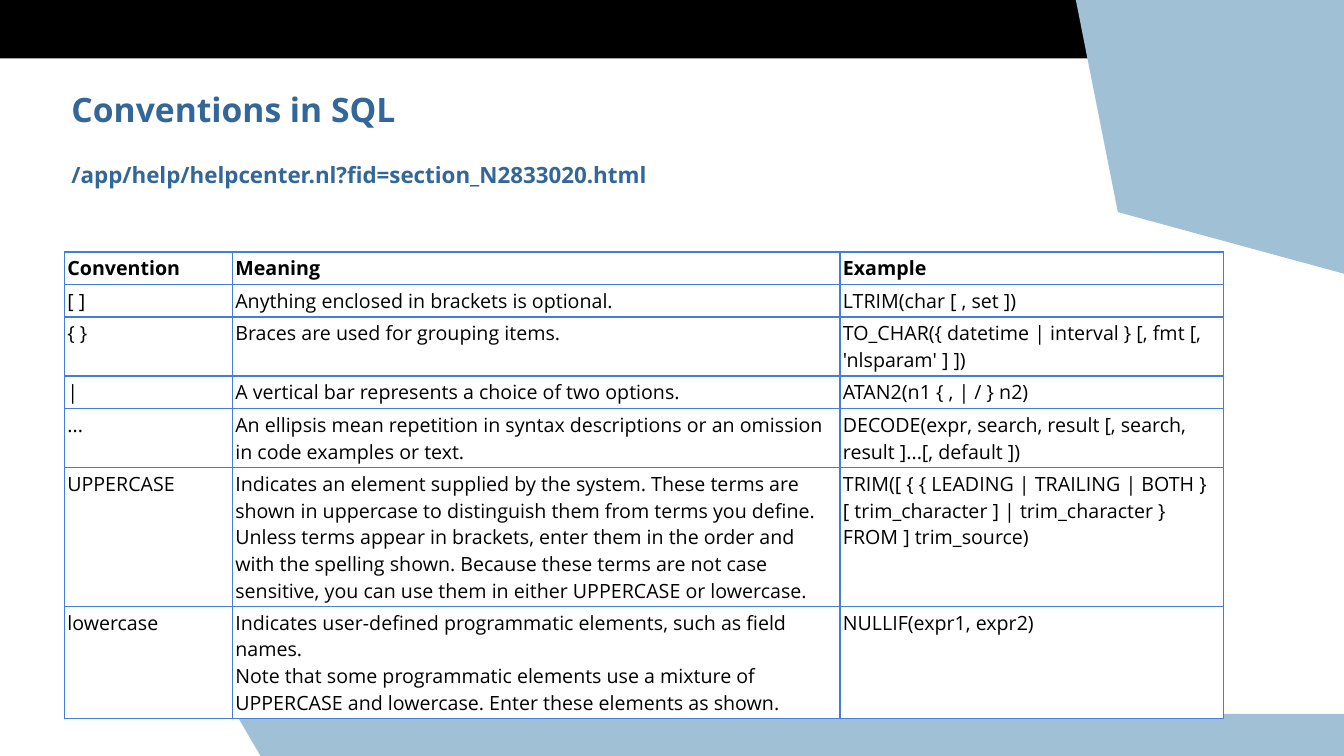
from dataclasses import dataclass

from lxml.etree import SubElement
from pptx import Presentation
from pptx.dml.color import RGBColor
from pptx.enum.shapes import MSO_SHAPE
from pptx.oxml.ns import qn
from pptx.util import Pt


@dataclass(frozen=True)
class Theme:
    white: str = "FFFFFF"
    black: str = "000000"
    pale_blue: str = "A0C1D5"
    heading: str = "336699"
    border: str = "417FD9"
    heading_font: str = "Noto Sans"
    table_font: str = "Open Sans"
    title_size: int = 24
    address_size: int = 16
    table_size: int = 14
    line_height: int = 19
    cell_inset: float = 2.1


THEME = Theme()
SLIDE_WIDTH, SLIDE_HEIGHT = 960, 540
COLUMN_WIDTHS = [120, 434, 274]

# Each row: number of text lines in its tallest cell, then the cell texts
CONVENTIONS = [
    (1, "Convention", "Meaning", "Example"),
    (1, "[ ]", "Anything enclosed in brackets is optional.", "LTRIM(char [ , set ])"),
    (2, "{ }", "Braces are used for grouping items.",
     "TO_CHAR({ datetime | interval } [, fmt [, 'nlsparam' ] ])"),
    (1, "|", "A vertical bar represents a choice of two options.", "ATAN2(n1 { , | / } n2)"),
    (2, "...",
     "An ellipsis mean repetition in syntax descriptions or an omission "
     "in code examples or text.",
     "DECODE(expr, search, result [, search, result ]...[, default ])"),
    (5, "UPPERCASE",
     "Indicates an element supplied by the system. These terms are shown in uppercase "
     "to distinguish them from terms you define. Unless terms appear in brackets, enter "
     "them in the order and with the spelling shown. Because these terms are not case "
     "sensitive, you can use them in either UPPERCASE or lowercase.",
     "TRIM([ { { LEADING | TRAILING | BOTH }[ trim_character ] | trim_character } "
     "FROM ] trim_source)"),
    (4, "lowercase",
     "Indicates user-defined programmatic elements, such as field names.\n"
     "Note that some programmatic elements use a mixture of UPPERCASE and lowercase. "
     "Enter these elements as shown.",
     "NULLIF(expr1, expr2)"),
]


def paint(shape, color):
    shape.shadow.inherit = False
    shape.fill.solid()
    shape.fill.fore_color.rgb = RGBColor.from_string(color)
    shape.line.fill.background()


def add_block(slide, kind, left, top, width, height, color):
    block = slide.shapes.add_shape(kind, Pt(left), Pt(top), Pt(width), Pt(height))
    paint(block, color)


def style_text(paragraph, font_name, size, color, bold):
    for run in paragraph.runs:
        run.font.name = font_name
        run.font.size = Pt(size)
        run.font.bold = bold
        run.font.color.rgb = RGBColor.from_string(color)


def add_top_decoration(slide, left, top, width, height):
    """Black band on the left, slanted pale panel in the right corner."""
    right = left + width
    add_block(slide, MSO_SHAPE.RECTANGLE, left, top, width - 162, 41.8, THEME.black)
    builder = slide.shapes.build_freeform(Pt(right - 191.5), Pt(top))
    builder.add_line_segments([
        (Pt(right - 161.5), Pt(top + 151.5)),
        (Pt(right), Pt(top + height)),
        (Pt(right), Pt(top)),
    ])
    paint(builder.convert_to_shape(), THEME.pale_blue)


def add_bottom_decoration(slide, left, top, width, height):
    """Pale band whose left end is cut at a slant by a white triangle."""
    add_block(slide, MSO_SHAPE.RECTANGLE, left, top, width, height, THEME.pale_blue)
    add_block(slide, MSO_SHAPE.ISOSCELES_TRIANGLE, left - 24, top - 11, 48, height + 11,
              THEME.white)


def add_heading(slide, left, top, width, height):
    frame = slide.shapes.add_textbox(Pt(left), Pt(top), Pt(width), Pt(height)).text_frame
    frame.word_wrap = True
    frame.text = "Conventions in SQL\n/app/help/helpcenter.nl?fid=section_N2833020.html"
    title, address = frame.paragraphs
    address.space_before = Pt(24)
    for paragraph, size in ((title, THEME.title_size), (address, THEME.address_size)):
        paragraph.line_spacing = 0.9
        style_text(paragraph, THEME.heading_font, size, THEME.heading, True)


def add_borders(cell):
    properties = cell._tc.get_or_add_tcPr()
    for position, side in enumerate(("lnL", "lnR", "lnT", "lnB")):
        border = SubElement(properties, qn(f"a:{side}"), w=str(Pt(1)))
        fill = SubElement(border, qn("a:solidFill"))
        SubElement(fill, qn("a:srgbClr"), val=THEME.border)
        properties.insert(position, border)


def fill_cell(cell, text, bold):
    cell.margin_left = cell.margin_right = Pt(THEME.cell_inset)
    cell.margin_top = cell.margin_bottom = Pt(THEME.cell_inset)
    cell.fill.solid()
    cell.fill.fore_color.rgb = RGBColor.from_string(THEME.white)
    cell.text_frame.text = text
    for paragraph in cell.text_frame.paragraphs:
        style_text(paragraph, THEME.table_font, THEME.table_size, THEME.black, bold)
    add_borders(cell)


def add_conventions_table(slide, left, top):
    heights = [lines * THEME.line_height + 2 * THEME.cell_inset for lines, *_ in CONVENTIONS]
    table = slide.shapes.add_table(
        len(CONVENTIONS), len(COLUMN_WIDTHS), Pt(left), Pt(top),
        Pt(sum(COLUMN_WIDTHS)), Pt(sum(heights))).table
    table.horz_banding = False
    for column, width in zip(table.columns, COLUMN_WIDTHS):
        column.width = Pt(width)
    for index, (_, *texts) in enumerate(CONVENTIONS):
        table.rows[index].height = Pt(heights[index])
        for cell, text in zip(table.rows[index].cells, texts):
            fill_cell(cell, text, bold=index == 0)


def add_conventions_slide(presentation):
    slide = presentation.slides.add_slide(presentation.slide_layouts[6])
    slide.background.fill.solid()
    slide.background.fill.fore_color.rgb = RGBColor.from_string(THEME.white)
    add_top_decoration(slide, 0, 0, SLIDE_WIDTH, 195.5)
    add_bottom_decoration(slide, 162, 510, SLIDE_WIDTH - 162, 30)
    add_heading(slide, 44, 63.5, 612, 84)
    add_conventions_table(slide, 46, 180)


def main():
    presentation = Presentation()
    presentation.slide_width = Pt(SLIDE_WIDTH)
    presentation.slide_height = Pt(SLIDE_HEIGHT)
    add_conventions_slide(presentation)
    presentation.save("out.pptx")


if __name__ == "__main__":
    main()
